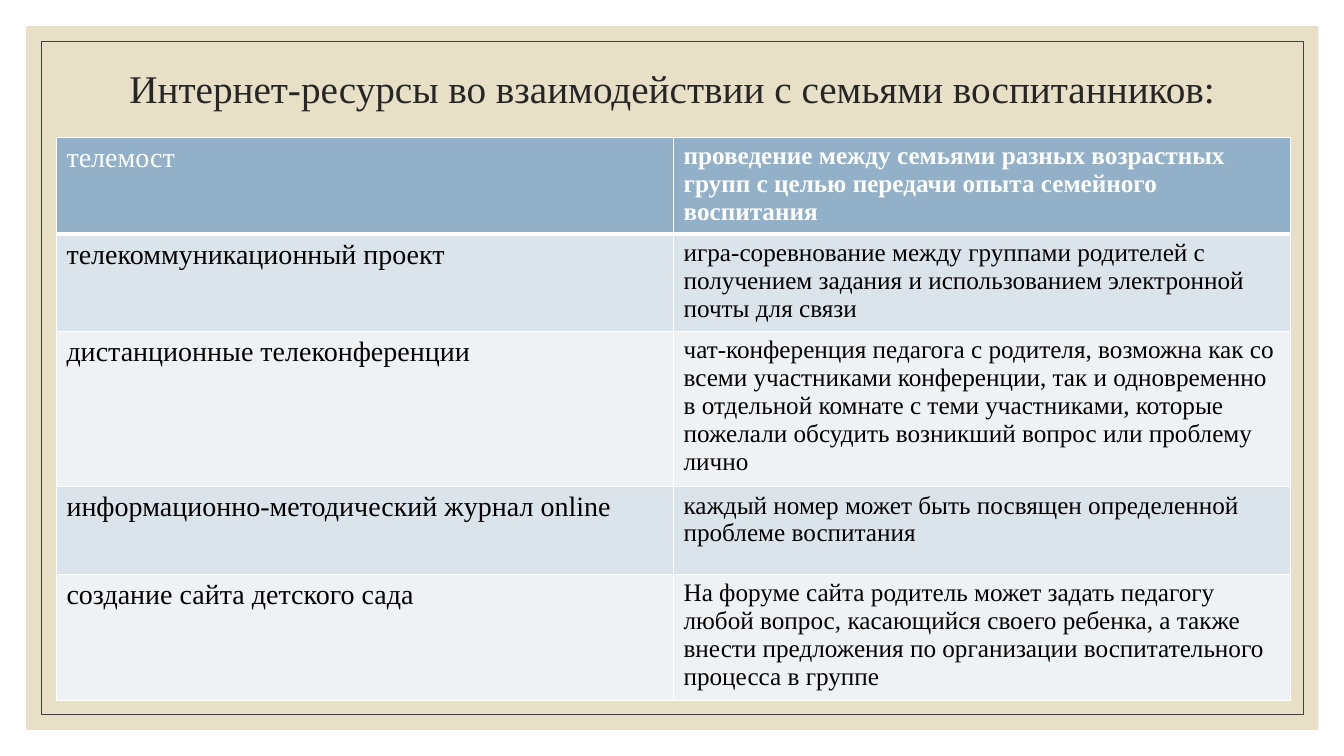
from lxml import etree
from pptx import Presentation
from pptx.dml.color import RGBColor
from pptx.enum.shapes import MSO_SHAPE
from pptx.enum.text import MSO_ANCHOR, MSO_AUTO_SIZE, PP_ALIGN
from pptx.oxml.ns import qn
from pptx.util import Pt

RECTANGLE = MSO_SHAPE.RECTANGLE
MIDDLE = MSO_ANCHOR.MIDDLE
NO_AUTOFIT = MSO_AUTO_SIZE.NONE
LEFT, CENTER = PP_ALIGN.LEFT, PP_ALIGN.CENTER

FONT = "Times New Roman"
COLORS = {
    "white": "FFFFFF",
    "sand": "E7E0C7",
    "frame": "404040",
    "title": "262626",
    "body": "000000",
    "header": "92B0C8",
    "odd": "DCE4EB",
    "even": "EEF2F5",
}

SLIDE_WIDTH, SLIDE_HEIGHT = 960, 540
TITLE = "Интернет-ресурсы во взаимодействии с семьями воспитанников:"
# Resource, description, row height
RESOURCES = [
    ("телемост",
     "проведение между семьями разных возрастных групп с целью передачи опыта "
     "семейного воспитания", 69.3),
    ("телекоммуникационный проект",
     "игра-соревнование между группами родителей с получением задания и "
     "использованием электронной почты для связи", 69.3),
    ("дистанционные телеконференции",
     "чат-конференция педагога с родителя, возможна как со всеми участниками "
     "конференции, так и одновременно в отдельной комнате с теми участниками, "
     "которые пожелали обсудить возникший вопрос или проблему лично", 111),
    ("информационно-методический журнал online",
     "каждый номер может быть посвящен определенной проблеме воспитания", 62.8),
    ("создание сайта детского сада",
     "На форуме сайта родитель может задать педагогу любой вопрос, касающийся "
     "своего ребенка, а также внести предложения по организации воспитательного "
     "процесса в группе", 90),
]


def rgb(name):
    return RGBColor.from_string(COLORS[name])


def write_text(frame, text, size, color, bold=False, align=LEFT, spacing=1.0):
    paragraph = frame.paragraphs[0]
    paragraph.alignment = align
    paragraph.line_spacing = spacing
    run = paragraph.add_run()
    run.text = text
    run.font.name = FONT
    run.font.size = Pt(size)
    run.font.bold = bold
    run.font.color.rgb = rgb(color)


def set_borders(cell, top, bottom):
    properties = cell._tc.get_or_add_tcPr()
    for side, width in (("L", 1), ("R", 1), ("T", top), ("B", bottom)):
        line = etree.SubElement(properties, qn(f"a:ln{side}"), w=str(Pt(width)))
        fill = etree.SubElement(line, qn("a:solidFill"))
        etree.SubElement(fill, qn("a:srgbClr"), val=COLORS["white"])


def add_background(slide, left, top, width, height):
    # Sand panel with a thin frame inside it
    inset = 11
    panel = slide.shapes.add_shape(
        RECTANGLE, Pt(left), Pt(top), Pt(width), Pt(height))
    panel.fill.solid()
    panel.fill.fore_color.rgb = rgb("sand")
    panel.line.fill.background()

    frame = slide.shapes.add_shape(
        RECTANGLE, Pt(left + inset), Pt(top + inset),
        Pt(width - 2 * inset), Pt(height - 2 * inset))
    frame.fill.background()
    frame.line.color.rgb = rgb("frame")
    frame.line.width = Pt(0.5)
    for part in (panel, frame):
        part.shadow.inherit = False


def add_title(slide, left, top, width, height):
    title = slide.shapes.title
    title.left, title.top = Pt(left), Pt(top)
    title.width, title.height = Pt(width), Pt(height)
    title.text_frame.word_wrap = True
    title.text_frame.auto_size = NO_AUTOFIT
    title.text_frame.vertical_anchor = MIDDLE
    write_text(title.text_frame, TITLE, size=28, color="title",
               align=CENTER, spacing=0.9)
    # Bring the title in front of the panel
    slide.shapes._spTree.append(title._element)


def add_resource_table(slide, left, top, width):
    height = sum(row_height for _, _, row_height in RESOURCES)
    table = slide.shapes.add_table(
        len(RESOURCES), 2, Pt(left), Pt(top), Pt(width), Pt(height)).table
    for column in table.columns:
        column.width = Pt(width / 2)

    for row, (resource, description, row_height) in enumerate(RESOURCES):
        table.rows[row].height = Pt(row_height)
        is_header = row == 0
        band = "header" if is_header else ("even", "odd")[row % 2]
        color = "white" if is_header else "body"
        for column, (text, size) in enumerate(((resource, 20), (description, 18))):
            cell = table.cell(row, column)
            set_borders(cell, top=3 if row == 1 else 1, bottom=3 if is_header else 1)
            cell.fill.solid()
            cell.fill.fore_color.rgb = rgb(band)
            write_text(cell.text_frame, text, size=size, color=color,
                       bold=is_header and column == 1)


def main():
    deck = Presentation()
    deck.slide_width, deck.slide_height = Pt(SLIDE_WIDTH), Pt(SLIDE_HEIGHT)
    slide = deck.slides.add_slide(deck.slide_layouts[5])
    add_background(slide, 18.7, 18.7, 923, 502.6)
    add_title(slide, 84, 10.8, 792, 108)
    add_resource_table(slide, 40.3, 98, 881.6)
    deck.save("out.pptx")


if __name__ == "__main__":
    main()
